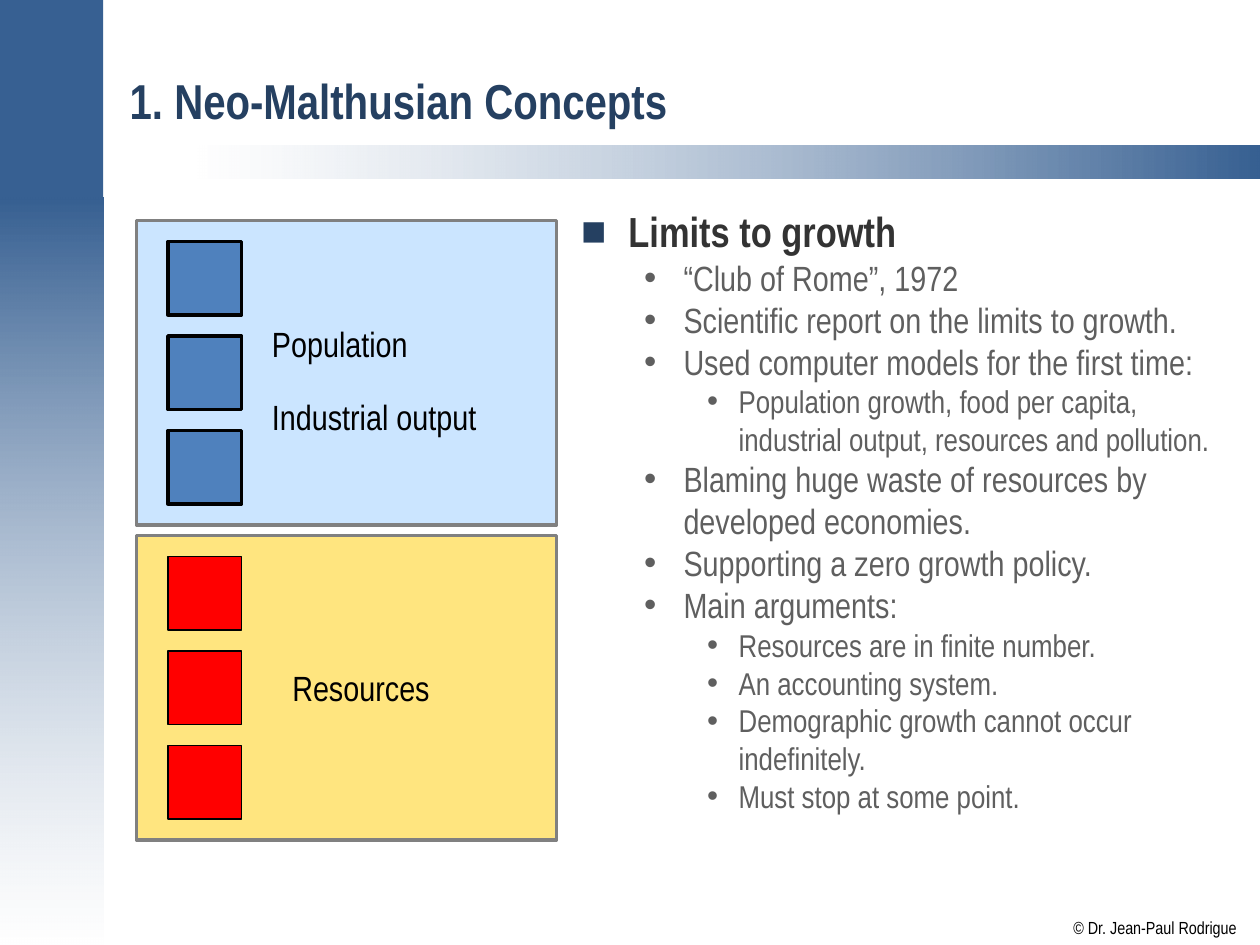
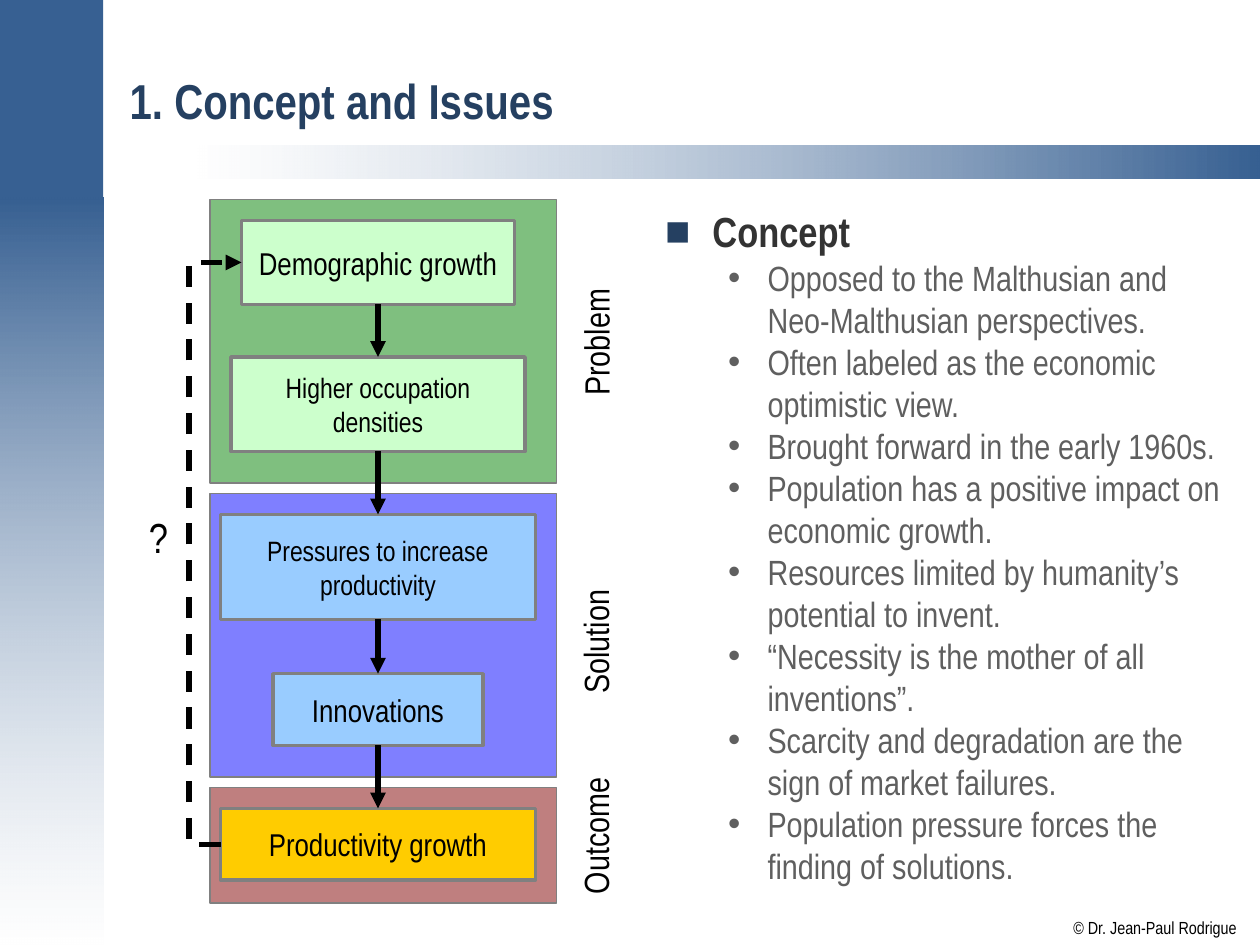
from dataclasses import dataclass

from pptx import Presentation
from pptx.dml.color import RGBColor
from pptx.enum.dml import MSO_LINE
from pptx.enum.shapes import MSO_CONNECTOR, MSO_SHAPE
from pptx.enum.text import MSO_ANCHOR, PP_ALIGN
from pptx.oxml.ns import qn
from pptx.oxml.xmlchemy import OxmlElement
from pptx.shapes.autoshape import Shape
from pptx.shapes.connector import Connector
from pptx.slide import Slide
from pptx.text.text import TextFrame
from pptx.util import Pt

RECTANGLE = MSO_SHAPE.RECTANGLE
STRAIGHT, ELBOW = MSO_CONNECTOR.STRAIGHT, MSO_CONNECTOR.ELBOW
DASH = MSO_LINE.DASH
TOP, MIDDLE = MSO_ANCHOR.TOP, MSO_ANCHOR.MIDDLE
LEFT, CENTER = PP_ALIGN.LEFT, PP_ALIGN.CENTER
TOP_SIDE, BOTTOM_SIDE = 0, 2

FONT = "Arial Narrow"
COLORS = {
    "band": "376092", "title": "254061", "heading": "333333", "body": "5F5F5F",
    "white": "FFFFFF", "black": "000000", "gray": "808080",
    "gold": "FFCC00", "sky": "99CCFF", "steel": "4F81BD", "red": "FF0000",
    "maroon": "800000", "blue": "0000FF", "green": "008000", "mint": "CCFFCC",
}


@dataclass(frozen=True)
class Area:
    left: float
    top: float
    width: float
    height: float

    def lengths(self) -> tuple[Pt, Pt, Pt, Pt]:
        return Pt(self.left), Pt(self.top), Pt(self.width), Pt(self.height)


@dataclass(frozen=True)
class Panel:
    area: Area
    color: str


@dataclass(frozen=True)
class Label:
    text: str
    area: Area
    size: float = 20
    rotation: float = 0


@dataclass(frozen=True)
class Step:
    text: str
    area: Area
    color: str
    size: float = 18


@dataclass(frozen=True)
class Level:
    indent: float
    hanging: float
    bullet: str
    size: float
    color: str
    bold: bool = False


LEVELS = (
    Level(27, 27, "■", 24, "heading", True),
    Level(58.5, 22.5, "•", 20, "body"),
    Level(90, 18, "•", 18, "body"),
)

LIMITS = (
    (0, "Limits to growth"),
    (1, "“Club of Rome”, 1972"),
    (1, "Scientific report on the limits to growth."),
    (1, "Used computer models for the first time:"),
    (2, "Population growth, food per capita, industrial output, "
        "resources and pollution."),
    (1, "Blaming huge waste of resources by developed economies."),
    (1, "Supporting a zero growth policy."),
    (1, "Main arguments:"),
    (2, "Resources are in finite number."),
    (2, "An accounting system."),
    (2, "Demographic growth cannot occur indefinitely."),
    (2, "Must stop at some point."),
)
CONCEPT = (
    (0, "Concept"),
    (1, "Opposed to the Malthusian and Neo-Malthusian perspectives."),
    (1, "Often labeled as the economic optimistic view."),
    (1, "Brought forward in the early 1960s."),
    (1, "Population has a positive impact on economic growth."),
    (1, "Resources limited by humanity’s potential to invent."),
    (1, "“Necessity is the mother of all inventions”."),
    (1, "Scarcity and degradation are the sign of market failures."),
    (1, "Population pressure forces the finding of solutions."),
)

FACTOR_LABELS = (
    Label("Population", Area(148.3, 181, 93, 31.5)),
    Label("Industrial output", Area(148.3, 222.7, 132.5, 31.5)),
    Label("Resources", Area(160, 377.5, 93.6, 31.5)),
)

STAGE_PANELS = (
    Panel(Area(120, 450, 198, 66), "maroon"),
    Panel(Area(120, 282, 198, 162), "blue"),
    Panel(Area(120, 114, 198, 162), "green"),
)
STAGE_LABELS = (
    Label("?", Area(78, 289, 26, 36), size=24),
    Label("Problem", Area(302.4, 179.3, 76.3, 31.5), rotation=270),
    Label("Solution", Area(303.1, 350.6, 74.2, 31.5), rotation=270),
    Label("Outcome", Area(299.5, 461.5, 81.4, 31.5), rotation=270),
)
STEPS = (
    Step("Demographic growth", Area(138, 126, 156, 48), "mint"),
    Step("Higher occupation\ndensities", Area(132, 204, 168, 54), "mint", 16),
    Step("Pressures to increase\nproductivity", Area(126, 294, 180, 60), "sky", 16),
    Step("Innovations", Area(156, 385, 120, 41), "sky"),
    Step("Productivity growth", Area(126, 462, 180, 41), "gold"),
)
FEEDBACK_X = 108


def rgb(name: str) -> RGBColor:
    return RGBColor.from_string(COLORS[name])


def set_opacity(shape: Shape, color: str, percent: float) -> None:
    for element in shape._element.spPr.iter(qn("a:srgbClr")):
        if element.get("val") == COLORS[color]:
            alpha = OxmlElement("a:alpha")
            alpha.set("val", str(round(percent * 1000)))
            element.append(alpha)


def style_text(frame: TextFrame, size: float, color: str,
               bold: bool = False, align: PP_ALIGN = LEFT) -> None:
    for para in frame.paragraphs:
        para.alignment = align
        for span in para.runs:
            span.font.name = FONT
            span.font.size = Pt(size)
            span.font.bold = bold
            span.font.color.rgb = rgb(color)


def add_box(page: Slide, area: Area, color: str,
            line: str = "", line_width: float = 2) -> Shape:
    box = page.shapes.add_shape(RECTANGLE, *area.lengths())
    box.shadow.inherit = False
    box.fill.solid()
    box.fill.fore_color.rgb = rgb(color)
    if line:
        box.line.color.rgb = rgb(line)
        box.line.width = Pt(line_width)
    else:
        box.line.fill.background()
    return box


def add_fading_band(page: Slide, area: Area, colors: tuple[str, str],
                    angle: float) -> None:
    """Draw a band whose white end is half transparent."""
    band = add_box(page, area, "band")
    band.fill.gradient()
    band.fill.gradient_angle = angle
    for stop, color in zip(band.fill.gradient_stops, colors):
        stop.color.rgb = rgb(color)
    set_opacity(band, "white", 50)


def add_panel(page: Slide, panel: Panel, line_width: float) -> None:
    box = add_box(page, panel.area, panel.color, "gray", line_width)
    set_opacity(box, panel.color, 50)


def add_label(page: Slide, label: Label) -> Shape:
    box = page.shapes.add_textbox(*label.area.lengths())
    box.rotation = label.rotation
    frame = box.text_frame
    frame.word_wrap = False
    frame.text = label.text
    style_text(frame, label.size, "black")
    return box


def add_footer(page: Slide) -> None:
    footer = add_label(page, Label("© Dr. Jean-Paul Rodrigue",
                                   Area(613.4, 524, 93.6, 12), size=10))
    frame = footer.text_frame
    frame.margin_left = frame.margin_right = Pt(0)
    frame.margin_top = frame.margin_bottom = Pt(0)


def add_title(page: Slide, title: str) -> None:
    box = page.shapes.add_textbox(*Area(67, 12, 641, 90).lengths())
    frame = box.text_frame
    frame.word_wrap = True
    frame.vertical_anchor = MIDDLE
    frame.text = title
    style_text(frame, 28, "title", bold=True)


def add_page(deck: Presentation, title: str) -> Slide:
    page = deck.slides.add_slide(deck.slide_layouts[6])
    add_fading_band(page, Area(0, 113, 59, 427), ("band", "white"), 270)
    add_fading_band(page, Area(113, 83, 607, 19), ("white", "band"), 0)
    add_box(page, Area(0, 0, 59, 113), "band")
    add_footer(page)
    add_title(page, title)
    return page


def add_outline(page: Slide, area: Area, items: tuple[tuple[int, str], ...]) -> None:
    box = page.shapes.add_textbox(*area.lengths())
    frame = box.text_frame
    frame.word_wrap = True
    frame.vertical_anchor = TOP
    frame.text = "\n".join(text for _, text in items)
    for para, (depth, _) in zip(frame.paragraphs, items):
        level = LEVELS[depth]
        properties = para._p.get_or_add_pPr()
        properties.set("marL", str(Pt(level.indent)))
        properties.set("indent", str(-Pt(level.hanging)))
        if depth == 0:
            bullet_color = OxmlElement("a:buClr")
            value = OxmlElement("a:srgbClr")
            value.set("val", COLORS["title"])
            bullet_color.append(value)
            properties.append(bullet_color)
        for tag, key, setting in (("a:buFont", "typeface", "Arial"),
                                  ("a:buChar", "char", level.bullet)):
            element = OxmlElement(tag)
            element.set(key, setting)
            properties.append(element)
        span = para.runs[0]
        span.font.name = FONT
        span.font.size = Pt(level.size)
        span.font.bold = level.bold
        span.font.color.rgb = rgb(level.color)


def add_step(page: Slide, step: Step) -> Shape:
    box = add_box(page, step.area, step.color, "gray")
    frame = box.text_frame
    frame.word_wrap = True
    frame.vertical_anchor = MIDDLE
    frame.text = step.text
    style_text(frame, step.size, "black", align=CENTER)
    return box


def add_arrow(page: Slide, kind: MSO_CONNECTOR, start: tuple[float, float],
              end: tuple[float, float]) -> Connector:
    arrow = page.shapes.add_connector(kind, *(Pt(value) for value in start + end))
    arrow.line.color.rgb = rgb("black")
    arrow.line.width = Pt(3)
    head = OxmlElement("a:tailEnd")
    head.set("type", "triangle")
    arrow.line._get_or_add_ln().append(head)
    arrow._element.spPr.append(OxmlElement("a:effectLst"))
    return arrow


def add_feedback(page: Slide, source: Area, target: Area) -> None:
    """Lead a dashed arrow from the last step round the left to the first."""
    start = (source.left, source.top + source.height / 2)
    end = (target.left, target.top + target.height / 2)
    arrow = add_arrow(page, ELBOW, start, end)
    arrow.line.dash_style = DASH
    bend = (FEEDBACK_X - start[0]) / (end[0] - start[0])
    guide = OxmlElement("a:gd")
    guide.set("name", "adj1")
    guide.set("fmla", f"val {round(bend * 100000)}")
    arrow._element.spPr.find(qn("a:prstGeom")).get_or_add_avLst().append(guide)


def build_limits(deck: Presentation) -> None:
    page = add_page(deck, "1. Neo-Malthusian Concepts")
    for top, panel_color, square_color, line_width in (
            (306, "gold", "red", 1), (126, "sky", "steel", 2)):
        add_panel(page, Panel(Area(78, top, 240, 174), panel_color), 2)
        for row in range(3):
            add_box(page, Area(96, top + 12 + 54 * row, 42, 42),
                    square_color, "black", line_width)
    for label in FACTOR_LABELS:
        add_label(page, label)
    add_outline(page, Area(325, 114, 384, 405), LIMITS)


def build_concept(deck: Presentation) -> None:
    page = add_page(deck, "1. Concept and Issues")
    for panel in STAGE_PANELS:
        add_panel(page, panel, 1)
    add_outline(page, Area(373, 114, 336, 405), CONCEPT)
    boxes = [add_step(page, step) for step in STEPS]
    for upper, lower in zip(boxes, boxes[1:]):
        arrow = add_arrow(page, STRAIGHT, (0, 0), (0, 0))
        arrow.begin_connect(upper, BOTTOM_SIDE)
        arrow.end_connect(lower, TOP_SIDE)
    add_feedback(page, STEPS[-1].area, STEPS[0].area)
    for label in STAGE_LABELS:
        add_label(page, label)


def main() -> None:
    deck = Presentation()
    deck.slide_width, deck.slide_height = Pt(720), Pt(540)
    build_limits(deck)
    build_concept(deck)
    deck.save("out.pptx")


if __name__ == "__main__":
    main()
